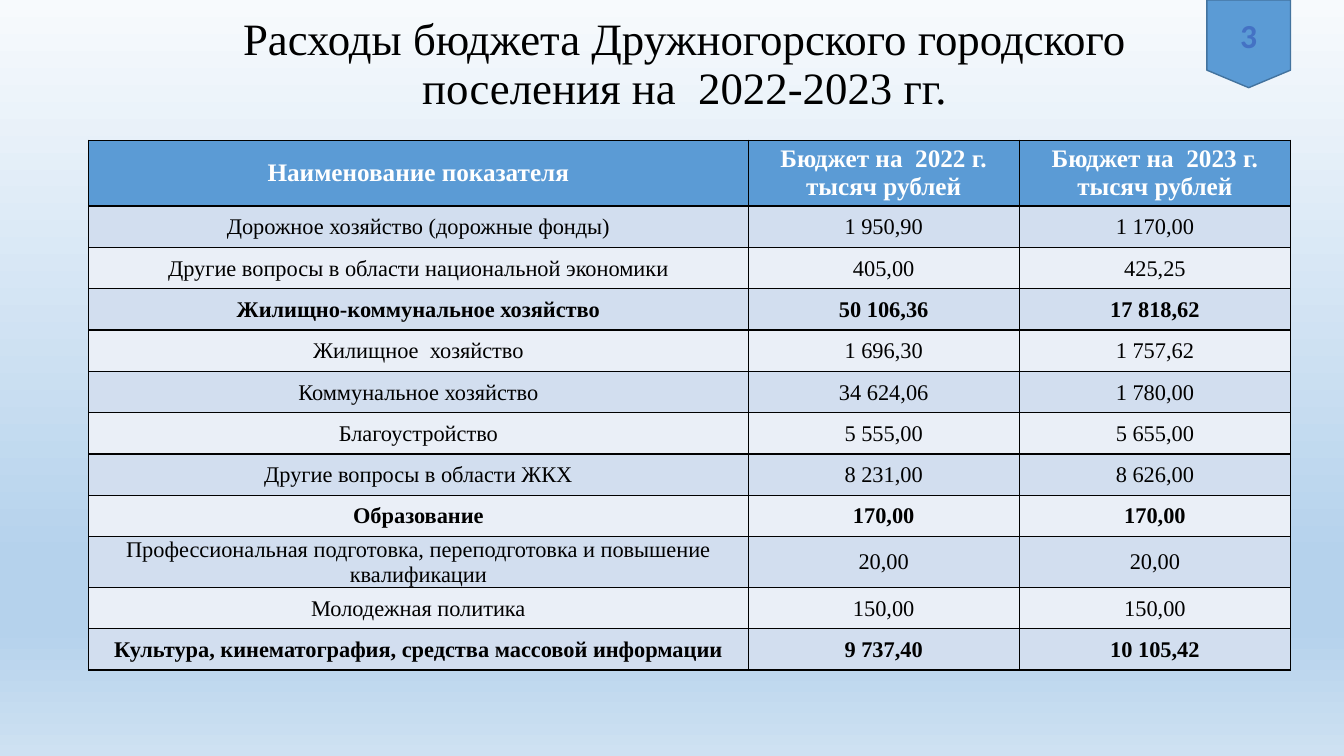
import pptx
import pptx.util
import pptx.dml.color
import pptx.enum.shapes
import pptx.enum.text
import pptx.oxml
import pptx.oxml.ns
from dataclasses import dataclass

Inches = pptx.util.Inches
MIDDLE = pptx.enum.text.MSO_ANCHOR.MIDDLE
BOTTOM = pptx.enum.text.MSO_ANCHOR.BOTTOM
CENTER = pptx.enum.text.PP_ALIGN.CENTER
NAMESPACE = pptx.oxml.ns.nsdecls("a")


@dataclass
class Theme:
    font: str = "Times New Roman"
    ink: str = "000000"
    white: str = "FFFFFF"
    accent: str = "5B9BD5"
    badge_line: str = "43739E"
    badge_number: str = "4472C4"
    bands: tuple = ("D2DEEF", "EAEFF7")
    sky: tuple = ((0, "F7FAFD"), (74, "B5D2EC"), (83, "B5D2EC"), (100, "CEE1F2"))
    title_size: int = 32
    header_size: int = 18
    body_size: int = 16
    badge_size: int = 24


theme = Theme()


def rgb(code):
    return pptx.dml.color.RGBColor.from_string(code)


def write(para, text, size, color, bold=False, font=theme.font):
    para.alignment = CENTER
    span = para.add_run()
    span.text = text
    span.font.size = pptx.util.Pt(size)
    span.font.color.rgb = rgb(color)
    span.font.bold = bold
    span.font.name = font


deck = pptx.Presentation()
deck.slide_width = Inches(13.33)
deck.slide_height = Inches(7.5)
page = deck.slides.add_slide(deck.slide_layouts[5])

backdrop = page.background.fill
backdrop.gradient()
backdrop.gradient_angle = 270
stops = next(page.element.iter(pptx.oxml.ns.qn("a:gsLst")))
for stop in list(stops):
    stops.remove(stop)
for position, color in theme.sky:
    stops.append(pptx.oxml.parse_xml(
        f'<a:gs {NAMESPACE} pos="{position * 1000}"><a:srgbClr val="{color}"/></a:gs>'))

title = page.shapes.title
title.left, title.top = Inches(1.75), Inches(0)
title.width, title.height = Inches(10.08), Inches(1.18)
title_frame = title.text_frame
title_frame.auto_size = pptx.enum.text.MSO_AUTO_SIZE.NONE
title_frame.word_wrap = True
title_frame.vertical_anchor = BOTTOM
title_frame.paragraphs[0].line_spacing = 0.9
write(title_frame.paragraphs[0],
      "Расходы бюджета Дружногорского городского поселения на  2022-2023 гг.",
      theme.title_size, theme.ink)

header = ("Наименование показателя", "Бюджет на  2022 г.\nтысяч рублей",
          "Бюджет на  2023 г.\nтысяч рублей")
expenses = [
    ("Дорожное хозяйство (дорожные фонды)", "1 950,90", "1 170,00"),
    ("Другие вопросы в области национальной экономики", "405,00", "425,25"),
    ("Жилищно-коммунальное хозяйство", "50 106,36", "17 818,62"),
    ("Жилищное  хозяйство", "1 696,30", "1 757,62"),
    ("Коммунальное хозяйство", "34 624,06", "1 780,00"),
    ("Благоустройство", "5 555,00", "5 655,00"),
    ("Другие вопросы в области ЖКХ", "8 231,00", "8 626,00"),
    ("Образование", "170,00", "170,00"),
    ("Профессиональная подготовка, переподготовка и повышение квалификации", "20,00", "20,00"),
    ("Молодежная политика", "150,00", "150,00"),
    ("Культура, кинематография, средства массовой информации", "9 737,40", "10 105,42"),
]
sections = ("Жилищно-коммунальное хозяйство", "Образование",
            "Культура, кинематография, средства массовой информации")
rows = [header] + expenses
column_widths = (6.54, 2.69, 2.69)
row_heights = [0.65] + [0.41] * len(expenses)
row_heights[9] = 0.5

table = page.shapes.add_table(
    len(rows), len(header), Inches(0.88), Inches(1.39),
    Inches(sum(column_widths)), Inches(sum(row_heights))).table
for column, width in zip(table.columns, column_widths):
    column.width = Inches(width)
for row, height in zip(table.rows, row_heights):
    row.height = Inches(height)

for row_index, values in enumerate(rows):
    is_header = row_index == 0
    for column_index, value in enumerate(values):
        cell = table.cell(row_index, column_index)
        cell.vertical_anchor = MIDDLE
        if not is_header:
            cell.margin_left = cell.margin_right = cell.margin_top = Inches(0.01)
            cell.margin_bottom = Inches(0)
        for line_index, line in enumerate(value.split("\n")):
            frame = cell.text_frame
            para = frame.add_paragraph() if line_index else frame.paragraphs[0]
            write(para, line,
                  theme.header_size if is_header else theme.body_size,
                  theme.white if is_header else theme.ink,
                  is_header or values[0] in sections)
        properties = cell._tc.get_or_add_tcPr()
        for side in ("lnL", "lnR", "lnT", "lnB"):
            properties.append(pptx.oxml.parse_xml(
                f'<a:{side} {NAMESPACE} w="12700"><a:solidFill>'
                f'<a:srgbClr val="{theme.ink}"/></a:solidFill></a:{side}>'))
        cell.fill.solid()
        cell.fill.fore_color.rgb = rgb(
            theme.accent if is_header else theme.bands[(row_index - 1) % 2])

badge = page.shapes.add_shape(
    pptx.enum.shapes.MSO_SHAPE.FLOWCHART_OFFPAGE_CONNECTOR,
    Inches(11.97), Inches(0), Inches(0.83), Inches(0.87))
badge.shadow.inherit = False
badge.fill.solid()
badge.fill.fore_color.rgb = rgb(theme.accent)
badge.line.color.rgb = rgb(theme.badge_line)
badge.line.width = pptx.util.Pt(1)
badge.text_frame.vertical_anchor = MIDDLE
write(badge.text_frame.paragraphs[0], "3", theme.badge_size, theme.badge_number,
      bold=True, font="Calibri")

deck.save("out.pptx")
